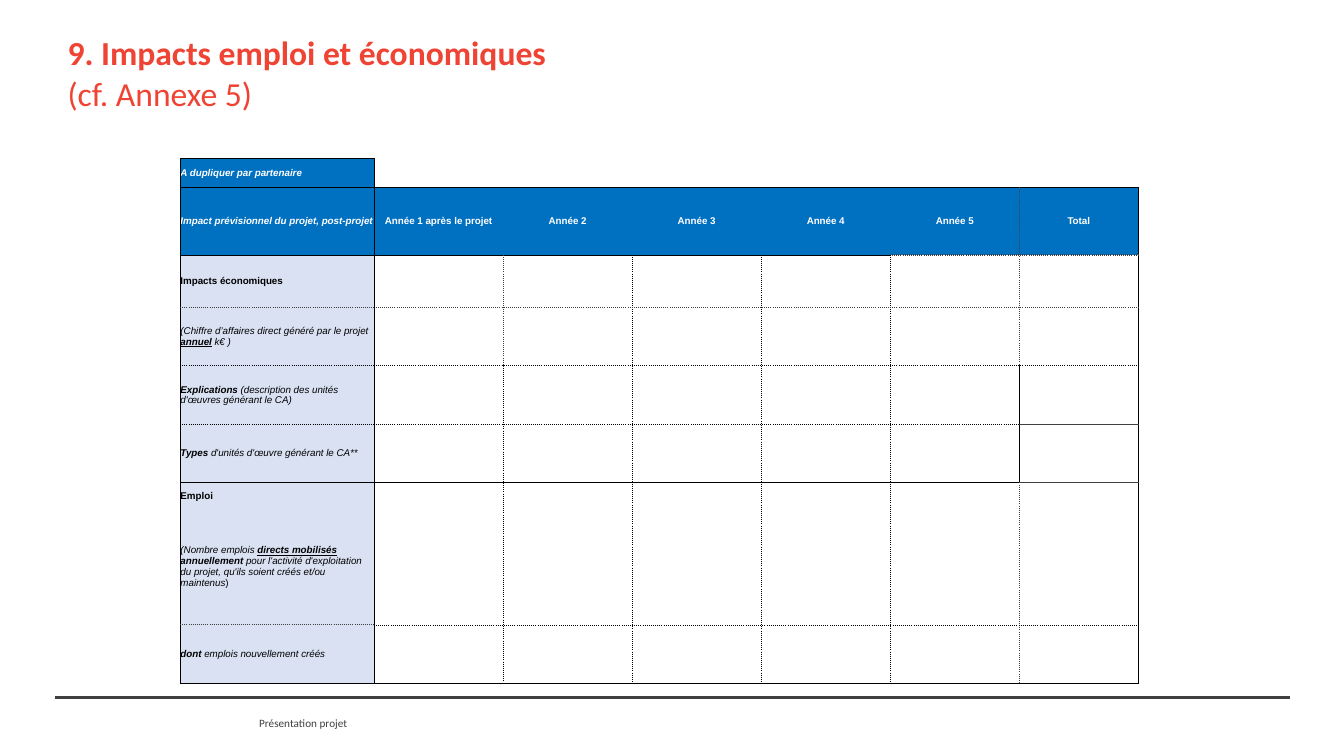
import pptx
import pptx.dml.color
import pptx.enum.shapes
import pptx.enum.text
import pptx.oxml
import pptx.oxml.ns
import pptx.util
from lxml import etree
from pptx.util import Inches

RED = pptx.dml.color.RGBColor(0xEF, 0x43, 0x33)
BLUE = pptx.dml.color.RGBColor(0x00, 0x70, 0xC0)
PALE_BLUE = pptx.dml.color.RGBColor(0xD9, 0xE1, 0xF2)
GREY = pptx.dml.color.RGBColor(0x40, 0x40, 0x40)
WHITE = pptx.dml.color.RGBColor(0xFF, 0xFF, 0xFF)
BLACK = pptx.dml.color.RGBColor(0x00, 0x00, 0x00)

COLUMN_WIDTHS = [1.92] + [1.28] * 5 + [1.18, 0.59]
ROW_HEIGHTS = [0.29, 0.67, 0.52, 0.58, 0.58, 0.58, 0.26, 1.15, 0.58]
YEAR_HEADINGS = ["Année 1 après le projet", "Année 2", "Année 3", "Année 4", "Année 5", "Total"]
# Each run is its text and its styles: b(old), i(talic), u(nderlined)
ROW_LABELS = [
    [("A dupliquer par partenaire", "bi")],
    [("Impact prévisionnel du projet, post-projet", "bi")],
    [("Impacts économiques", "b")],
    [("(Chiffre d’affaires direct généré par le projet ", "i"), ("annuel", "biu"),
     (" ", "bi"), ("k€ )", "i")],
    [("Explications ", "bi"), ("(description des unités d'œuvres générant le CA)", "i")],
    [("Types ", "bi"), ("d'unités d'œuvre générant le CA**", "i")],
    [("Emploi", "b")],
    [("(Nombre emplois ", "i"), ("directs mobilisés", "biu"), (" annuellement ", "bi"),
     ("pour l'activité d'exploitation du projet, qu'ils soient créés et/ou maintenus", "i"),
     (")", "")],
    [("dont ", "bi"), ("emplois nouvellement créés", "i")],
]
EMPLOYMENT_ROW = 6

# Border letters: colour, points, dash
BORDERS = {
    "S": (BLACK, 0.5, "solid"),
    "D": (BLACK, 0.5, "dot"),
    "G": (GREY, 1, "dot"),
    "Y": (GREY, 1, "sysDot"),
    "K": (GREY, 1, "solid"),
}
# One string per horizontal edge, one letter per column
HORIZONTAL_EDGES = ["S.......", "SSSSSSS.", "SSSSSYY.", "GGGGGGG.", "DDDDDDD.",
                    "DDDDDDK.", "SSSSSSK.", "........", "GDDDDDD.", "SSSSSSS."]
# One string per row, one letter per vertical edge
VERTICAL_EDGES = (["SS.......", "SS....GS."] + ["SSGDDDGS."] * 2
                  + ["SSDDDDSS."] * 2 + ["SSDDDDGS."] * 3)


def add_runs(paragraph, runs):
    for text, styles in runs:
        run = paragraph.add_run()
        run.text = text
        run.font.bold = "b" in styles
        run.font.italic = "i" in styles
        run.font.underline = "u" in styles


def set_font(paragraph, name, size, color):
    paragraph.font.name = name
    paragraph.font.size = pptx.util.Pt(size)
    paragraph.font.color.rgb = color


def add_title(slide, left, top, width, height):
    frame = slide.shapes.add_textbox(left, top, width, height).text_frame
    frame.word_wrap = True
    frame.margin_left = frame.margin_right = 0
    frame.vertical_anchor = pptx.enum.text.MSO_ANCHOR.MIDDLE
    paragraph = frame.paragraphs[0]
    add_runs(paragraph, [("9. Impacts emploi et économiques", "b")])
    paragraph.add_line_break()
    add_runs(paragraph, [("(cf. Annexe 5)", "")])
    set_font(paragraph, "Calibri", 24, RED)


def add_footer(slide, left, top, width):
    rule = slide.shapes.add_connector(
        pptx.enum.shapes.MSO_CONNECTOR.STRAIGHT, left, top, left + width, top)
    rule.line.color.rgb = GREY
    rule.line.width = pptx.util.Pt(1.5)
    etree.SubElement(rule._element.spPr, pptx.oxml.ns.qn("a:effectLst"))
    frame = slide.shapes.add_textbox(
        left + Inches(2.02), top + Inches(0.19), Inches(0.88), Inches(0.13)).text_frame
    frame.word_wrap = False
    frame.margin_left = frame.margin_right = frame.margin_top = frame.margin_bottom = 0
    paragraph = frame.paragraphs[0]
    paragraph.text = "Présentation projet"
    set_font(paragraph, "Calibri", 8, GREY)


def set_border(cell, side, letter):
    properties = cell._tc.get_or_add_tcPr()
    line = etree.SubElement(properties, pptx.oxml.ns.qn("a:ln" + side))
    if letter not in BORDERS:
        etree.SubElement(line, pptx.oxml.ns.qn("a:noFill"))
        return
    color, points, dash = BORDERS[letter]
    line.set("w", str(pptx.util.Pt(points)))
    fill = etree.SubElement(line, pptx.oxml.ns.qn("a:solidFill"))
    etree.SubElement(fill, pptx.oxml.ns.qn("a:srgbClr"), val=str(color))
    etree.SubElement(line, pptx.oxml.ns.qn("a:prstDash"), val=dash)


def fill_cell(cell, row, column):
    if column == 7 or (row == 0 and column > 0):
        cell.fill.background()
        return
    cell.fill.solid()
    if row < 2:
        cell.fill.fore_color.rgb = BLUE
    else:
        cell.fill.fore_color.rgb = WHITE if column else PALE_BLUE


def write_cell(cell, row, column):
    cell.margin_left = cell.margin_right = cell.margin_top = cell.margin_bottom = 0
    cell.vertical_anchor = pptx.enum.text.MSO_ANCHOR.MIDDLE
    paragraph = cell.text_frame.paragraphs[0]
    if column == 0:
        add_runs(paragraph, ROW_LABELS[row])
    elif row == 1 and column <= len(YEAR_HEADINGS):
        add_runs(paragraph, [(YEAR_HEADINGS[column - 1], "b")])
        paragraph.alignment = pptx.enum.text.PP_ALIGN.CENTER
    else:
        # Keeps an empty cell from stretching its row
        etree.SubElement(paragraph._p, pptx.oxml.ns.qn("a:endParaRPr"), sz="700")
    set_font(paragraph, "Arial", 7, WHITE if row < 2 else BLACK)


def add_impact_table(slide, left, top):
    table = slide.shapes.add_table(
        len(ROW_HEIGHTS), len(COLUMN_WIDTHS), left, top,
        Inches(sum(COLUMN_WIDTHS)), Inches(sum(ROW_HEIGHTS))).table
    table.first_row = table.horz_banding = False
    for column, width in enumerate(COLUMN_WIDTHS):
        table.columns[column].width = Inches(width)
    for row, height in enumerate(ROW_HEIGHTS):
        table.rows[row].height = Inches(height)
    for column in range(1, 7):
        table.cell(EMPLOYMENT_ROW, column).merge(table.cell(EMPLOYMENT_ROW + 1, column))
    for row in range(len(ROW_HEIGHTS)):
        for column in range(len(COLUMN_WIDTHS)):
            cell = table.cell(row, column)
            bottom = row + (cell.span_height if cell.is_merge_origin else 1)
            set_border(cell, "L", VERTICAL_EDGES[row][column])
            set_border(cell, "R", VERTICAL_EDGES[row][column + 1])
            set_border(cell, "T", HORIZONTAL_EDGES[row][column])
            set_border(cell, "B", HORIZONTAL_EDGES[bottom][column])
            fill_cell(cell, row, column)
            write_cell(cell, row, column)


def main():
    presentation = pptx.Presentation()
    presentation.slide_width = Inches(13.33)
    presentation.slide_height = Inches(7.5)
    slide = presentation.slides.add_slide(presentation.slide_layouts[6])
    add_footer(slide, Inches(0.55), Inches(6.92), Inches(12.24))
    add_title(slide, Inches(0.67), Inches(0.3), Inches(12), Inches(0.84))
    add_impact_table(slide, Inches(1.79), Inches(1.57))
    presentation.save("out.pptx")


if __name__ == "__main__":
    main()
